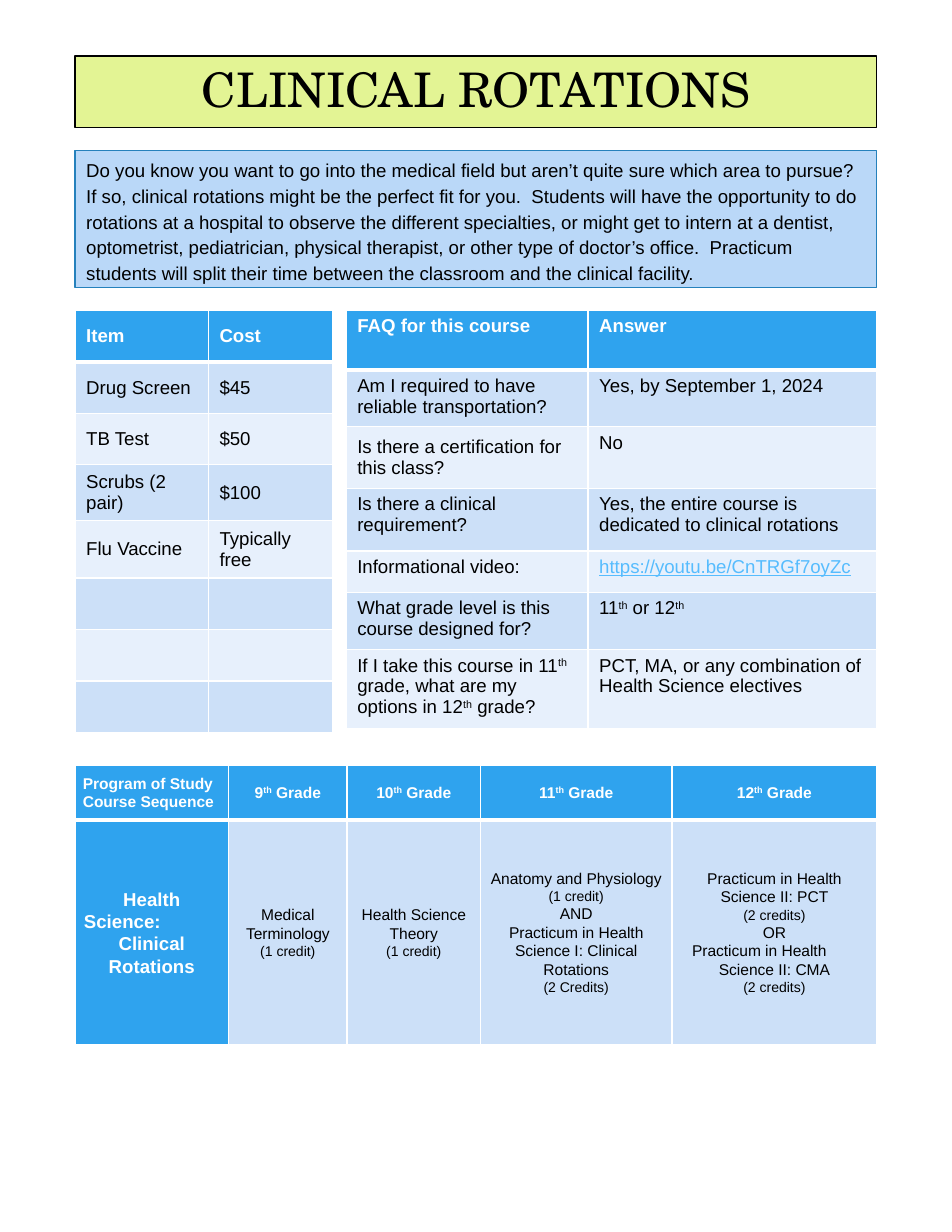
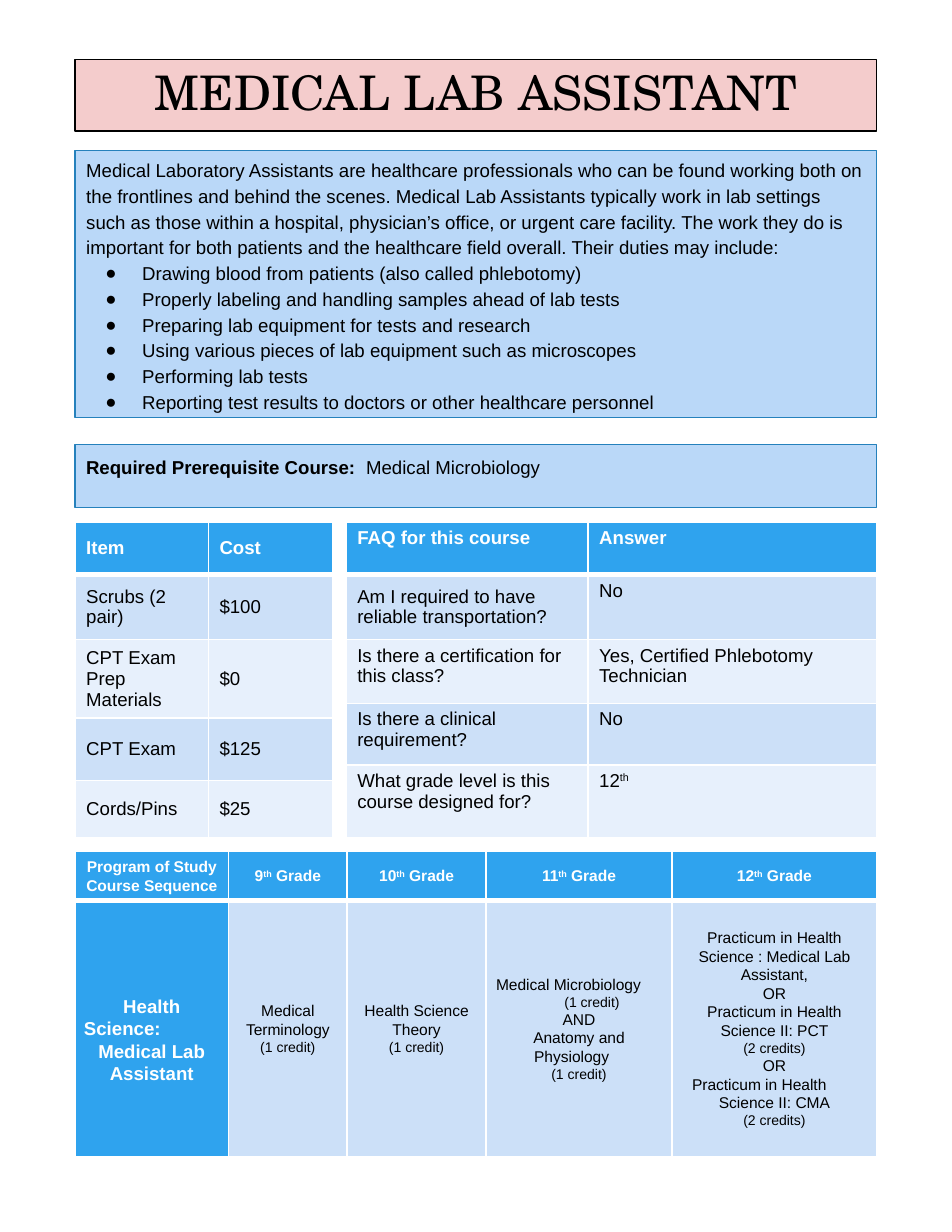
from dataclasses import dataclass

from lxml.etree import SubElement
from pptx import Presentation
from pptx.dml.color import RGBColor
from pptx.enum.shapes import MSO_SHAPE
from pptx.enum.text import MSO_ANCHOR, MSO_AUTO_SIZE, PP_ALIGN
from pptx.oxml.ns import qn
from pptx.util import Inches, Pt


@dataclass(frozen=True)
class Theme:
    ink: str = "000000"
    white: str = "FFFFFF"
    lime: str = "E3F494"
    pink: str = "F4CCCC"
    panel: str = "BAD8F8"
    edge: str = "2581BC"
    head: str = "2FA3EE"
    bands: tuple = ("CCE0F8", "E7F0FC")
    link: str = "56BCFE"
    serif: str = "TeX Gyre Schola"
    sans: str = "Arial"
    title: float = 30.6
    body: float = 12
    course: float = 10
    credit: float = 9


THEME = Theme()
LEFT, WIDTH = 0.67, 7.16
FAQ_LEFT = 3.09
COST_COLS = (1.19, 1.11)
FAQ_COLS = (2.16, 2.58)
COST_HEAD = ("Item", "Cost")
FAQ_HEAD = ("FAQ for this course", "Answer")
RIDE = "Am I required to have reliable transportation?"
CERT = "Is there a certification for this class?"
CLINIC = "Is there a clinical requirement?"
GRADE = "What grade level is this course designed for?"
PLAN_HEAD = ("Program of Study Course Sequence", "9^th^ Grade", "10^th^ Grade",
             "11^th^ Grade", "12^th^ Grade")
EARLY = (
    ("Medical Terminology", "(1 credit)"),
    ("Health Science Theory", "(1 credit)"),
)
PRACTICUM = (
    "Practicum in Health", "Science II: PCT", "(2 credits)", "OR",
    ("Practicum in Health", 0.11), "Science II: CMA", "(2 credits)",
)


def rgb(code):
    return RGBColor.from_string(code)


def write(frame, paras, size=THEME.body, color=THEME.ink, face=THEME.sans,
          bold=False, align=PP_ALIGN.LEFT, spacing=1.0, small=None):
    """Fill a frame. "^" wraps superscripts, "|" ends a bold lead, and "● "
    starts a bullet. A (text, indent) pair is set flush left; `small` is the
    size of lines in parentheses."""
    if isinstance(paras, str):
        paras = (paras,)
    for i, item in enumerate(paras):
        para = frame.paragraphs[0] if i == 0 else frame.add_paragraph()
        text, indent = (item, 0) if isinstance(item, str) else item
        props = para._p.get_or_add_pPr()
        bullet = text.startswith("● ")
        if bullet:
            text = text[2:]
            SubElement(props, qn("a:buChar")).set("char", "●")
        else:
            SubElement(props, qn("a:buNone"))
        props.set("marL", str(Inches(0.5 if bullet else indent)))
        props.set("indent", str(Inches(-0.33 if bullet else 0)))
        para.alignment = align if isinstance(item, str) else PP_ALIGN.LEFT
        para.line_spacing = spacing
        para.space_before = para.space_after = Pt(0)
        link = text.startswith("https:")
        lead, _, rest = text.rpartition("|")
        parts = [(lead, True, False)] if lead else []
        parts += [(part, bold, n % 2 == 1) for n, part in enumerate(rest.split("^"))]
        for part, heavy, raised in parts:
            if not part:
                continue
            run = para.add_run()
            run.text = part
            font = run.font
            font.name = face
            font.size = Pt(small if small and text.startswith("(") else size)
            font.bold = heavy
            font.color.rgb = rgb(THEME.link if link else color)
            if link:
                font.underline = True
            if raised:
                run._r.get_or_add_rPr().set("baseline", "30000")


def place(shape, top, height, fill, line):
    shape.left, shape.top = Inches(LEFT), Inches(top)
    shape.width, shape.height = Inches(WIDTH), Inches(height)
    shape.fill.solid()
    shape.fill.fore_color.rgb = rgb(fill)
    shape.line.color.rgb = rgb(line)
    shape.line.width = Pt(0.75)


def setup(frame, anchor=MSO_ANCHOR.TOP, pad=0.05):
    frame.auto_size = MSO_AUTO_SIZE.NONE
    frame.word_wrap = True
    frame.vertical_anchor = anchor
    frame.margin_left = frame.margin_right = Inches(0.1)
    frame.margin_top = frame.margin_bottom = Inches(pad)


def banner(slide, text, top, fill):
    shape = slide.shapes.title
    place(shape, top, 0.64, fill, THEME.ink)
    setup(shape.text_frame, MSO_ANCHOR.MIDDLE)
    write(shape.text_frame, text, size=THEME.title, face=THEME.serif,
          align=PP_ALIGN.CENTER, spacing=0.9)


def intro(slide, paras, height):
    shape = slide.placeholders[1]
    place(shape, 1.34, height, THEME.panel, THEME.edge)
    setup(shape.text_frame)
    write(shape.text_frame, paras, spacing=1.15)


def notice(slide, text, top, height):
    shape = slide.shapes.add_shape(MSO_SHAPE.RECTANGLE, 0, 0, 0, 0)
    shape.shadow.inherit = False
    place(shape, top, height, THEME.panel, THEME.edge)
    setup(shape.text_frame, pad=0.1)
    write(shape.text_frame, text)


def style(cell, fill, rule, anchor, pad):
    """Give a cell white borders (`rule` is the bottom width), fill and margins."""
    props = cell._tc.get_or_add_tcPr()
    for tag, width in (("lnL", 1), ("lnR", 1), ("lnT", 1), ("lnB", rule)):
        line = SubElement(props, qn(f"a:{tag}"), w=str(Pt(width)))
        solid = SubElement(line, qn("a:solidFill"))
        SubElement(solid, qn("a:srgbClr"), val=THEME.white)
    cell.fill.solid()
    cell.fill.fore_color.rgb = rgb(fill)
    cell.vertical_anchor = anchor
    cell.margin_left = cell.margin_right = Inches(pad[0])
    cell.margin_top = cell.margin_bottom = Inches(pad[1])


def grid(slide, left, top, cols, rows):
    frame = slide.shapes.add_table(
        len(rows), len(cols), Inches(left), Inches(top),
        Inches(sum(cols)), Inches(sum(rows)))
    table = frame.table
    table.first_row = table.horz_banding = False
    for col, width in zip(table.columns, cols):
        col.width = Inches(width)
    for row, height in zip(table.rows, rows):
        row.height = Inches(height)
    return table


def listing(slide, left, top, cols, rows, data, anchor=MSO_ANCHOR.TOP, mid=None):
    """Draw a banded table; `mid` is the row whose first cell is centred."""
    table = grid(slide, left, top, cols, rows)
    for r, line in enumerate(data):
        head = r == 0
        fill = THEME.head if head else THEME.bands[(r - 1) % 2]
        for c, text in enumerate(line):
            cell = table.cell(r, c)
            spot = MSO_ANCHOR.MIDDLE if (r, c) == (mid, 0) else anchor
            style(cell, fill, 3 if head else 1, spot, (0.1, 0.05))
            write(cell.text_frame, text, bold=head,
                  color=THEME.white if head else THEME.ink)


def pair(slide, top, costs, cost_rows, faq, faq_rows, mid):
    listing(slide, LEFT, top, COST_COLS, cost_rows, (COST_HEAD, *costs),
            anchor=MSO_ANCHOR.MIDDLE)
    listing(slide, FAQ_LEFT, top, FAQ_COLS, faq_rows, (FAQ_HEAD, *faq), mid=mid)


def plan(slide, top, cols, rows, track, courses, first=PP_ALIGN.CENTER, drop=0):
    """Draw the course sequence; `first` aligns its corner, `drop` lowers the track."""
    table = grid(slide, LEFT, top, cols, rows)
    for r, line in enumerate((PLAN_HEAD, (track, *EARLY, *courses))):
        for c, paras in enumerate(line):
            cell = table.cell(r, c)
            strong = r == 0 or c == 0
            style(cell, THEME.head if strong else THEME.bands[0],
                  3 if r == 0 else 1, MSO_ANCHOR.MIDDLE, (0.07, 0))
            write(cell.text_frame, paras, bold=strong, spacing=1.07,
                  size=THEME.body if (r, c) == (1, 0) else THEME.course,
                  color=THEME.white if strong else THEME.ink,
                  align=first if r == c == 0 else PP_ALIGN.CENTER,
                  small=THEME.credit)
    table.cell(1, 0).margin_top = Inches(drop)


def clinic(slide):
    banner(slide, "CLINICAL ROTATIONS", 0.5, THEME.lime)
    intro(slide, (
        "Do you know you want to go into the medical field but aren’t quite sure "
        "which area to pursue?  If so, clinical rotations might be the perfect fit "
        "for you.  Students will have the opportunity to do rotations at a hospital "
        "to observe the different specialties, or might get to intern at a dentist, "
        "optometrist, pediatrician, physical therapist, or other type of doctor’s "
        "office.  Practicum students will split their time between the classroom "
        "and the clinical facility."), 1.23)
    costs = (
        ("Drug Screen", "$45"),
        ("TB Test", "$50"),
        ("Scrubs (2 pair)", "$100"),
        ("Flu Vaccine", "Typically free"),
        *[("", "")] * 3,
    )
    faq = (
        (RIDE, "Yes, by September 1, 2024"),
        (CERT, "No"),
        (CLINIC, "Yes, the entire course is dedicated to clinical rotations"),
        ("Informational video:", "https://youtu.be/CnTRGf7oyZc"),
        (GRADE, "11^th^ or 12^th^"),
        ("If I take this course in 11^th^ grade, what are my options in 12^th^ grade?",
         "PCT, MA, or any combination of Health Science electives"),
    )
    pair(slide, 2.77, costs, (0.46, 0.46, 0.46, 0.5, 0.51, 0.46, 0.46, 0.46),
         faq, (0.53, 0.51, 0.55, 0.56, 0.37, 0.51, 0.71), mid=2)
    plan(slide, 6.83, (1.37, 1.06, 1.19, 1.71, 1.83), (0.49, 2.01),
         ("Health", ("Science:", 0.01), "Clinical", "Rotations"),
         (("Anatomy and Physiology", "(1 credit)", "AND",
           "Practicum in Health Science I: Clinical Rotations", "(2 Credits)"),
          PRACTICUM), first=PP_ALIGN.LEFT)


def lab(slide):
    banner(slide, "MEDICAL LAB ASSISTANT", 0.53, THEME.pink)
    intro(slide, (
        "Medical Laboratory Assistants are healthcare professionals who can be found "
        "working both on the frontlines and behind the scenes. Medical Lab Assistants "
        "typically work in lab settings such as those within a hospital, physician’s "
        "office, or urgent care facility. The work they do is important for both "
        "patients and the healthcare field overall. Their duties may include:",
        "● Drawing blood from patients (also called phlebotomy)",
        "● Properly labeling and handling samples ahead of lab tests",
        "● Preparing lab equipment for tests and research",
        "● Using various pieces of lab equipment such as microscopes",
        "● Performing lab tests",
        "● Reporting test results to doctors or other healthcare personnel"), 2.39)
    notice(slide, "Required Prerequisite Course:  |Medical Microbiology", 3.97, 0.56)
    costs = (
        ("Scrubs (2 pair)", "$100"),
        ("CPT Exam Prep Materials", "$0"),
        ("CPT Exam", "$125"),
        ("Cords/Pins", "$25"),
    )
    faq = (
        (RIDE, "No"),
        (CERT, "Yes, Certified Phlebotomy Technician"),
        (CLINIC, "No"),
        (GRADE, "12^th^"),
    )
    pair(slide, 4.66, costs, (0.47, 0.58, 0.7, 0.56, 0.51),
         faq, (0.47, 0.58, 0.57, 0.55, 0.65), mid=1)
    plan(slide, 7.6, (1.37, 1.06, 1.24, 1.66, 1.83), (0.44, 2.29),
         ("Health", ("Science:", 0.01), "Medical Lab", "Assistant"),
         ((("Medical Microbiology", 0.02), ("(1 credit)", 0.63), "AND",
           "Anatomy and", ("Physiology", 0.36), "(1 credit)"),
          ("Practicum in Health Science : Medical Lab Assistant,", "OR", *PRACTICUM)),
         drop=0.2)


def main():
    deck = Presentation()
    deck.slide_width, deck.slide_height = Inches(8.5), Inches(11)
    for build in (clinic, lab):
        build(deck.slides.add_slide(deck.slide_layouts[1]))
    deck.save("out.pptx")


if __name__ == "__main__":
    main()
